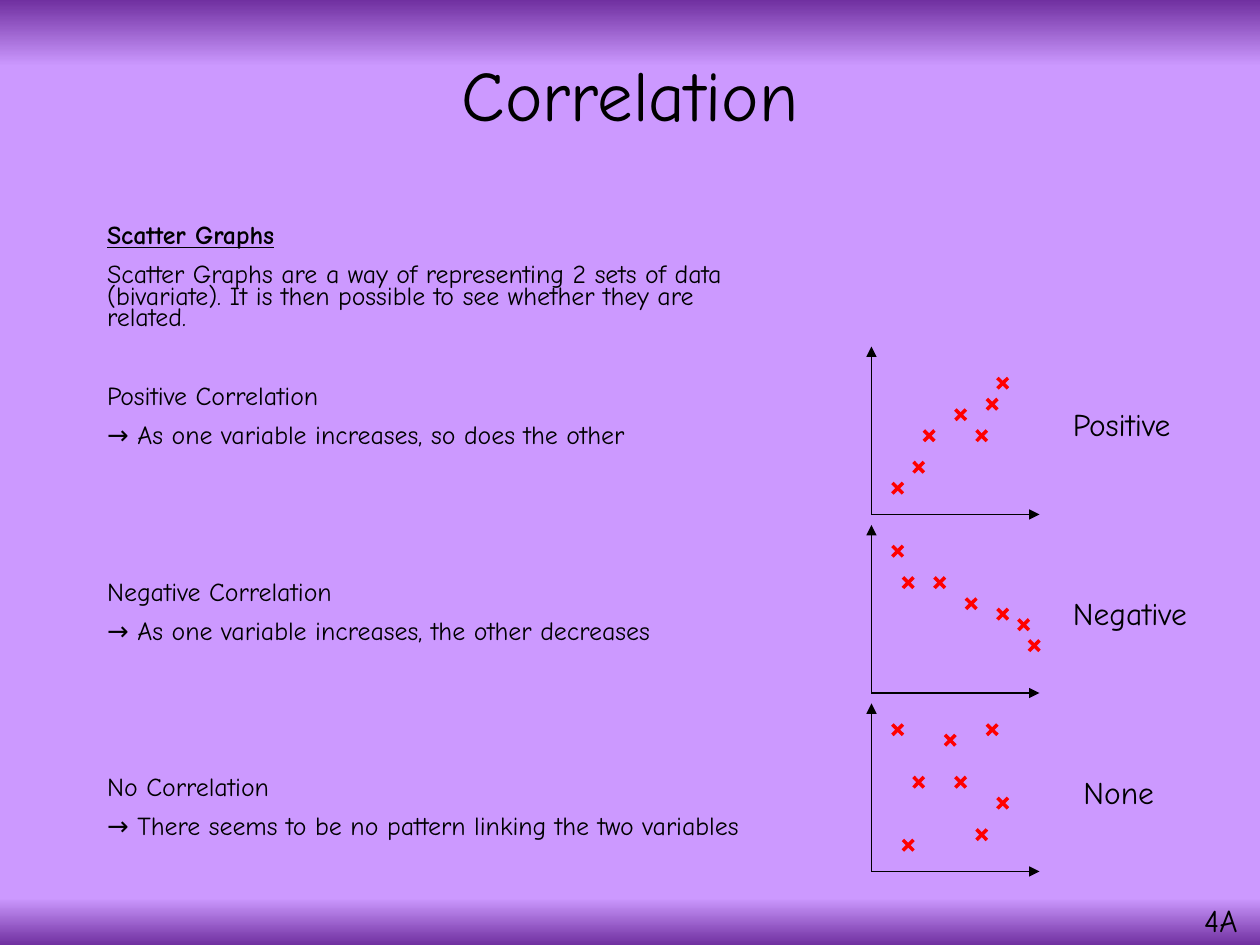
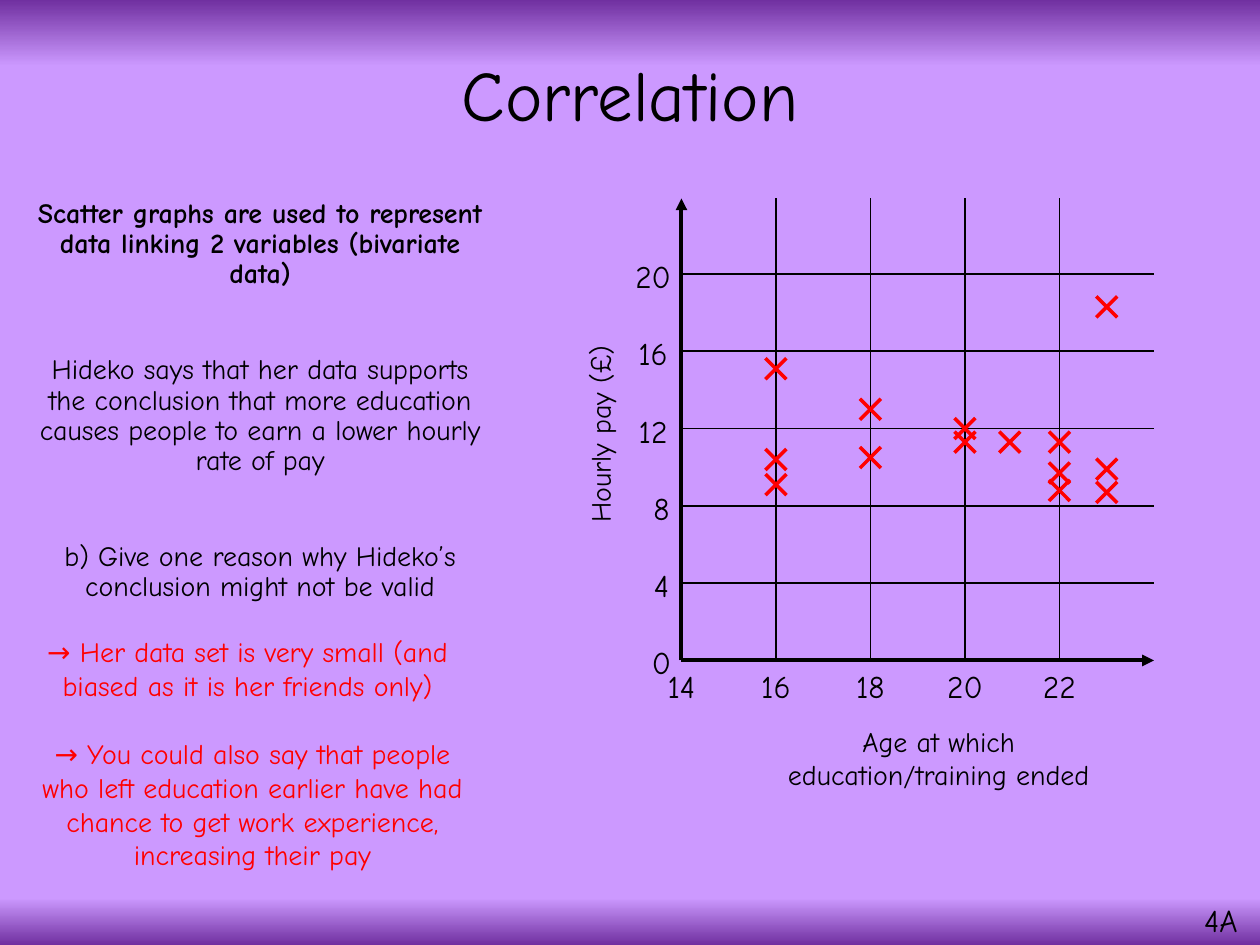
"""Build two slides on scatter graphs and correlation."""
from dataclasses import dataclass

from lxml import etree
from pptx import Presentation
from pptx.dml.color import RGBColor
from pptx.enum.shapes import MSO_CONNECTOR
from pptx.enum.text import MSO_ANCHOR, MSO_AUTO_SIZE, PP_ALIGN
from pptx.oxml.ns import qn
from pptx.util import Emu, Inches, Pt

CELL = Inches(1) / 12
COLS, ROWS = 120, 90
FONT = "Comic Neue"
BLACK, RED, LILAC, PURPLE = "000000", "FF0000", "CC99FF", "7030A0"
STOPS = ((0, PURPLE), (7, LILAC), (95, LILAC), (100, PURPLE))
LEFT, MID = PP_ALIGN.LEFT, PP_ALIGN.CENTER
STRAIGHT = MSO_CONNECTOR.STRAIGHT
MIDDLE, TOP = MSO_ANCHOR.MIDDLE, MSO_ANCHOR.TOP
FIXED, GROW = MSO_AUTO_SIZE.NONE, MSO_AUTO_SIZE.SHAPE_TO_FIT_TEXT


@dataclass(frozen=True)
class Box:
    x: float
    y: float
    w: float
    h: float


@dataclass(frozen=True)
class Para:
    text: str
    gap: float = 10
    bold: bool = False
    line: bool = False


@dataclass(frozen=True)
class Plot:
    name: str
    base: int
    label: Box
    marks: tuple


TITLE = Box(8.28, 2.88, 103.44, 13.08)
CODE = Box(113.5, 85.2, 6.5, 4.8)

NOTES = (
    Para("Scatter Graphs", bold=True, line=True),
    Para("Scatter Graphs are a way of representing 2 sets of data (bivariate). "
         "It is then possible to see whether they are related."),
    Para("Positive Correlation", 32.4),
    Para("→ As one variable increases, so does the other"),
    Para("Negative Correlation", 77),
    Para("→ As one variable increases, the other decreases"),
    Para("No Correlation", 77),
    Para("→ There seems to be no pattern linking the two variables"),
)
TASK = (
    Para("Scatter graphs are used to represent data linking 2 variables "
         "(bivariate data)", bold=True),
    Para("Hideko says that her data supports the conclusion that more "
         "education causes people to earn a lower hourly rate of pay", 37.7),
    Para("b) Give one reason why Hideko’s conclusion might not be valid", 37.7),
)
AXIS_X, AXIS_LEN = 83, 16
PLOTS = (
    Plot("Positive", 49, Box(101, 38, 14, 4.8),
         ((2, 3), (4, 5), (5, 8), (10, 8), (8, 10), (12, 13), (11, 11))),
    Plot("Negative", 66, Box(101, 56, 15, 4.8),
         ((2, 14), (3, 11), (6, 11), (9, 9), (12, 8), (14, 7), (15, 5))),
    Plot("None", 83, Box(102, 73, 15, 4.8),
         ((3, 3), (4, 9), (10, 4), (11, 14), (8, 9), (12, 7), (2, 14), (7, 13))),
)
PAY_X, PAY_Y, PAY_W, PAY_H = 64.9, 62.9, 45, 44
AGE_MIN, AGE_STEP, AGE_COLS = 14, 2, 9
PAY_STEP, PAY_ROWS = 4, 7.36
TICKS = 5
DATA = (
    (16, 9.1), (22, 8.8), (20, 11.3), (16, 10.4), (18, 10.5), (16, 15.1),
    (18, 13), (20.95, 11.3), (22, 9.7), (20, 12), (22, 11.3), (23, 8.7),
    (23, 9.9), (23, 18.3),
)
REASONS = (
    ("→ Her data set is very small (and biased as it is her friends only)",
     Box(1.32, 59.88, 44.5, 7.7)),
    ("→ You could also say that people who left education earlier have had "
     "chance to get work experience, increasing their pay",
     Box(1.8, 69.6, 44.5, 14.2)),
)


def grid(n: float) -> Emu:
    """Turn grid cells into a length."""
    return Emu(round(n * CELL))


def tint(color, code: str) -> None:
    """Set a colour from a hex string."""
    color.rgb = RGBColor.from_string(code)


def style(para, size: float, code: str = BLACK, bold: bool = False,
          line: bool = False) -> None:
    """Format every run of a paragraph."""
    for run in para.runs:
        font = run.font
        font.name, font.size = FONT, Pt(size)
        font.bold, font.underline = bold, line
        tint(font.color, code)


def place(shape, box: Box) -> None:
    """Move a shape onto its box."""
    shape.left, shape.top = grid(box.x), grid(box.y)
    shape.width, shape.height = grid(box.w), grid(box.h)


def paint(master) -> None:
    """Give the master its banded background."""
    fill = master.background.fill
    fill.gradient()
    fill.gradient_angle = 270
    stops = master.element.xpath("./p:cSld/p:bg//a:gsLst")[0]
    for old in list(stops):
        stops.remove(old)
    for pos, code in STOPS:
        stop = etree.SubElement(stops, qn("a:gs"), pos=str(pos * 1000))
        etree.SubElement(stop, qn("a:srgbClr"), val=code)


def label(slide, text: str, box: Box, size: float = 18, code: str = BLACK,
          align=MID, turn: float = 0) -> None:
    """Add a text box."""
    shape = slide.shapes.add_textbox(0, 0, 0, 0)
    place(shape, box)
    shape.rotation = turn
    frame = shape.text_frame
    frame.word_wrap, frame.auto_size = True, GROW
    para = frame.paragraphs[0]
    para.text, para.alignment = text, align
    style(para, size, code)


def rule(shapes, ends: tuple, width: float, code: str = BLACK,
         arrow: bool = False) -> None:
    """Draw a straight line, with an arrowhead if asked."""
    wire = shapes.add_connector(STRAIGHT, *(grid(n) for n in ends))
    wire.line.width = Pt(width)
    tint(wire.line.color, code)
    props = wire.element.spPr
    if arrow:
        etree.SubElement(props.find(qn("a:ln")), qn("a:tailEnd"), type="triangle")
    etree.SubElement(props, qn("a:effectLst"))


def cross(slide, x: float, y: float, size: float) -> None:
    """Draw a red cross centred on a point."""
    half = size / 2
    shapes = slide.shapes.add_group_shape().shapes
    for rise in (half, -half):
        rule(shapes, (x - half, y - rise, x + half, y + rise), 2, RED)


def axes(slide, x: float, y: float, w: float, h: float, width: float) -> None:
    """Draw two arrows from a common origin."""
    for end in ((x, y - h), (x + w, y)):
        rule(slide.shapes, (x, y, *end), width, arrow=True)


def body(slide, box: Box, paras: tuple, size: float, space: float, align,
         inset: float = 0) -> None:
    """Fill the body placeholder with paragraphs."""
    shape = slide.placeholders[1]
    place(shape, box)
    frame = shape.text_frame
    frame.auto_size, frame.vertical_anchor = FIXED, TOP
    for i, item in enumerate(paras):
        para = frame.add_paragraph() if i else frame.paragraphs[0]
        para.text, para.alignment = item.text, align
        para.line_spacing, para.space_before = space, Pt(item.gap)
        para.space_after = Pt(0)
        style(para, size, bold=item.bold, line=item.line)
        props = para._p.get_or_add_pPr()
        props.set("marL", str(grid(inset)))
        props.set("indent", "0")
        etree.SubElement(props, qn("a:buNone"))


def start(deck):
    """Add a slide with the shared title and section code."""
    slide = deck.slides.add_slide(deck.slide_layouts[1])
    title = slide.shapes.title
    place(title, TITLE)
    frame = title.text_frame
    frame.text = "Correlation"
    frame.auto_size, frame.vertical_anchor = FIXED, MIDDLE
    para = frame.paragraphs[0]
    para.alignment, para.line_spacing = MID, 0.9
    style(para, 40.5)
    label(slide, "4A", CODE, align=LEFT)
    return slide


def types(deck) -> None:
    """Show the three types of correlation."""
    slide = start(deck)
    body(slide, Box(6, 21, 66, 63), NOTES, 14.8, 0.7, LEFT, 3)
    for plot in PLOTS:
        axes(slide, AXIS_X, plot.base, AXIS_LEN, AXIS_LEN, 0.75)
        for col, row in plot.marks:
            cross(slide, AXIS_X + col + 0.5, plot.base - row + 0.5, 1)
        label(slide, plot.name, plot.label, align=LEFT)


def pay(deck) -> None:
    """Show pay against age with the answers."""
    slide = start(deck)
    body(slide, Box(1.92, 18.36, 45.72, 62.64), TASK, 16, 0.9, MID)
    for i in range(TICKS + 1):
        x, y = PAY_X + i * AGE_COLS, PAY_Y - i * PAY_ROWS
        if i:
            rule(slide.shapes, (PAY_X, y, PAY_X + PAY_W, y), 1)
        if 0 < i < TICKS:
            rule(slide.shapes, (x, PAY_Y - PAY_H, x, PAY_Y), 1)
        if i < TICKS:
            label(slide, str(AGE_MIN + i * AGE_STEP), Box(x - 3.5, PAY_Y, 7, 4.8))
        text = str(i * PAY_STEP)
        mid = PAY_X - 1.1 - 0.8 * len(text)
        label(slide, text, Box(mid - 3.5, y - 2.2, 7, 4.8))
    axes(slide, PAY_X, PAY_Y, PAY_W, PAY_H, 2.25)
    label(slide, "Age at which education/training ended",
          Box(71.4, 68.4, 36, 7.7), 16)
    label(slide, "Hourly pay (£)", Box(35.64, 39.12, 43, 4.44), 16, turn=270)
    for age, rate in DATA:
        cross(slide, PAY_X + (age - AGE_MIN) / AGE_STEP * AGE_COLS,
              PAY_Y - rate / PAY_STEP * PAY_ROWS, 2)
    for text, box in REASONS:
        label(slide, text, box, 16, RED)


def main() -> None:
    """Build and save the deck."""
    deck = Presentation()
    deck.slide_width, deck.slide_height = grid(COLS), grid(ROWS)
    paint(deck.slide_master)
    types(deck)
    pay(deck)
    deck.save("out.pptx")


if __name__ == "__main__":
    main()
